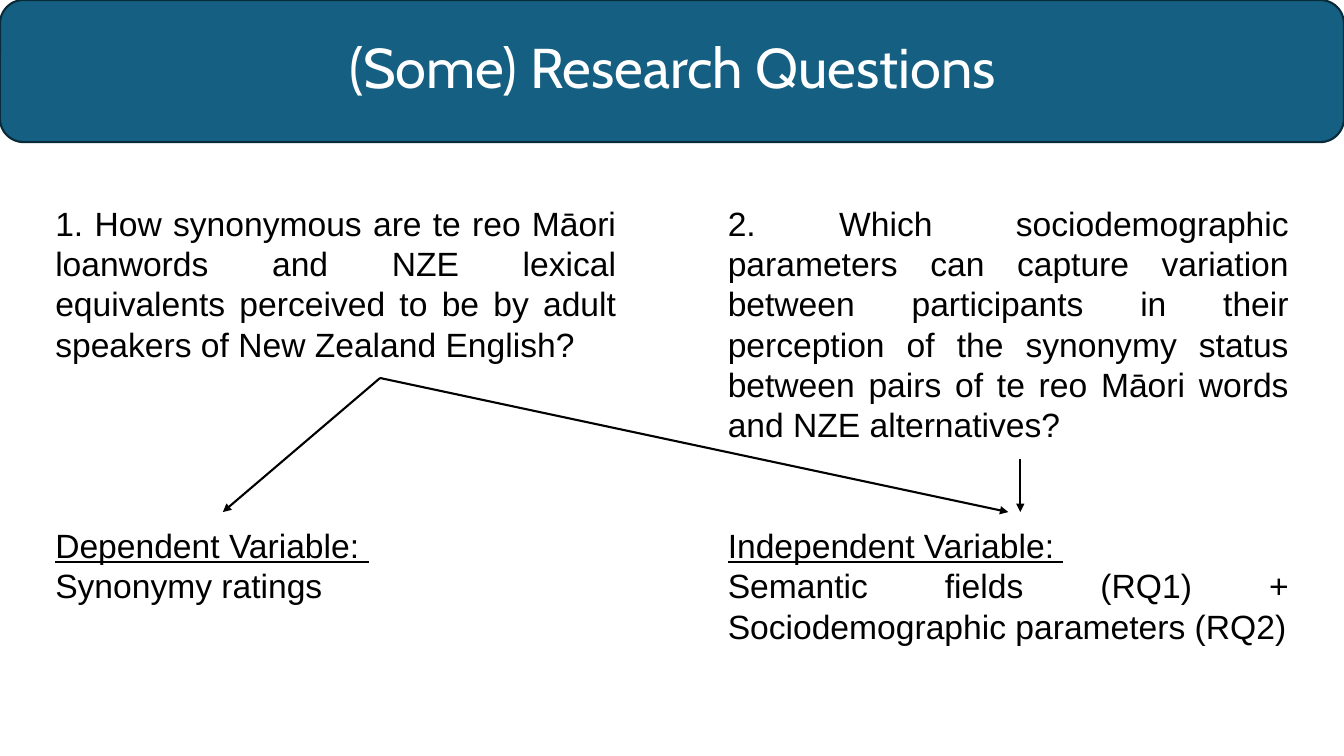
import pptx
import pptx.dml.color
import pptx.enum.shapes
import pptx.enum.text
import pptx.oxml
import pptx.oxml.ns
import pptx.util
from pptx.util import Inches, Pt

TITLE = "(Some) Research Questions"
COLUMNS = [
    {
        "left": 0.45, "height": 4.14, "blank_lines": 4,
        "question": "1. How synonymous are te reo Māori loanwords and NZE lexical "
                    "equivalents perceived to be by adult speakers of New Zealand English?",
        "variable": "Dependent Variable: ",
        "measure": "Synonymy ratings",
    },
    {
        "left": 7.12, "height": 4.54, "blank_lines": 2,
        "question": "2. Which sociodemographic parameters can capture variation between "
                    "participants in their perception of the synonymy status between pairs "
                    "of te reo Māori words and NZE alternatives?",
        "variable": "Independent Variable: ",
        "measure": "Semantic fields (RQ1) + Sociodemographic parameters (RQ2)",
    },
]
ARROWS = [
    ((3.77, 3.75), (2.21, 5.08)),
    ((3.77, 3.75), (10, 5.08)),
    ((10.12, 4.55), (10.12, 5.08)),
]
LINE_HEIGHT = 28.8


def color(hex_value):
    return pptx.dml.color.RGBColor.from_string(hex_value)


def add_text(slide, left, top, width, height):
    frame = slide.shapes.add_textbox(
        Inches(left), Inches(top), Inches(width), Inches(height)).text_frame
    frame.word_wrap = True
    return frame


def style(paragraph, text, font, size, hex_value, align):
    paragraph.text = text
    paragraph.font.name = font
    paragraph.font.size = Pt(size)
    paragraph.font.color.rgb = color(hex_value)
    paragraph.alignment = align


def add_banner(slide):
    banner = slide.shapes.add_shape(
        pptx.enum.shapes.MSO_SHAPE.ROUNDED_RECTANGLE,
        0, 0, Inches(13.33), Inches(1.41))
    banner.shadow.inherit = False
    banner.fill.solid()
    banner.fill.fore_color.rgb = color("156082")
    banner.line.color.rgb = color("092A39")
    banner.line.width = Pt(1.5)

    title = add_text(slide, 1.67, 0.02, 10, 1.03)
    title.vertical_anchor = pptx.enum.text.MSO_ANCHOR.BOTTOM
    heading = title.paragraphs[0]
    style(heading, TITLE, "Cabin", 40, "FFFFFF", pptx.enum.text.PP_ALIGN.CENTER)
    heading.line_spacing = 0.9


def add_column(slide, column):
    frame = add_text(slide, column["left"], 1.96, 5.76, column["height"])
    for part in ("question", "variable", "measure"):
        paragraph = frame.paragraphs[0] if part == "question" else frame.add_paragraph()
        style(paragraph, column[part], "Arial", 24, "000000",
              pptx.enum.text.PP_ALIGN.JUSTIFY)
        if part == "variable":
            paragraph.font.underline = True
            paragraph.runs[0].font.underline = True
            paragraph.space_before = Pt(column["blank_lines"] * LINE_HEIGHT)


def add_arrow(slide, start, end):
    arrow = slide.shapes.add_connector(
        pptx.enum.shapes.MSO_CONNECTOR.STRAIGHT,
        *(Inches(value) for value in start + end))
    arrow.line.color.rgb = color("000000")
    arrow.line.width = Pt(1.5)
    head = pptx.oxml.parse_xml(
        f'<a:tailEnd {pptx.oxml.ns.nsdecls("a")} type="triangle"/>')
    arrow.line._get_or_add_ln().append(head)
    arrow._element.spPr.append(
        pptx.oxml.parse_xml(f'<a:effectLst {pptx.oxml.ns.nsdecls("a")}/>'))


def main():
    deck = pptx.Presentation()
    deck.slide_width, deck.slide_height = Inches(13.33), Inches(7.5)
    slide = deck.slides.add_slide(deck.slide_layouts[6])
    add_banner(slide)
    for column in COLUMNS:
        add_column(slide, column)
    for start, end in ARROWS:
        add_arrow(slide, start, end)
    deck.save("out.pptx")


if __name__ == "__main__":
    main()
